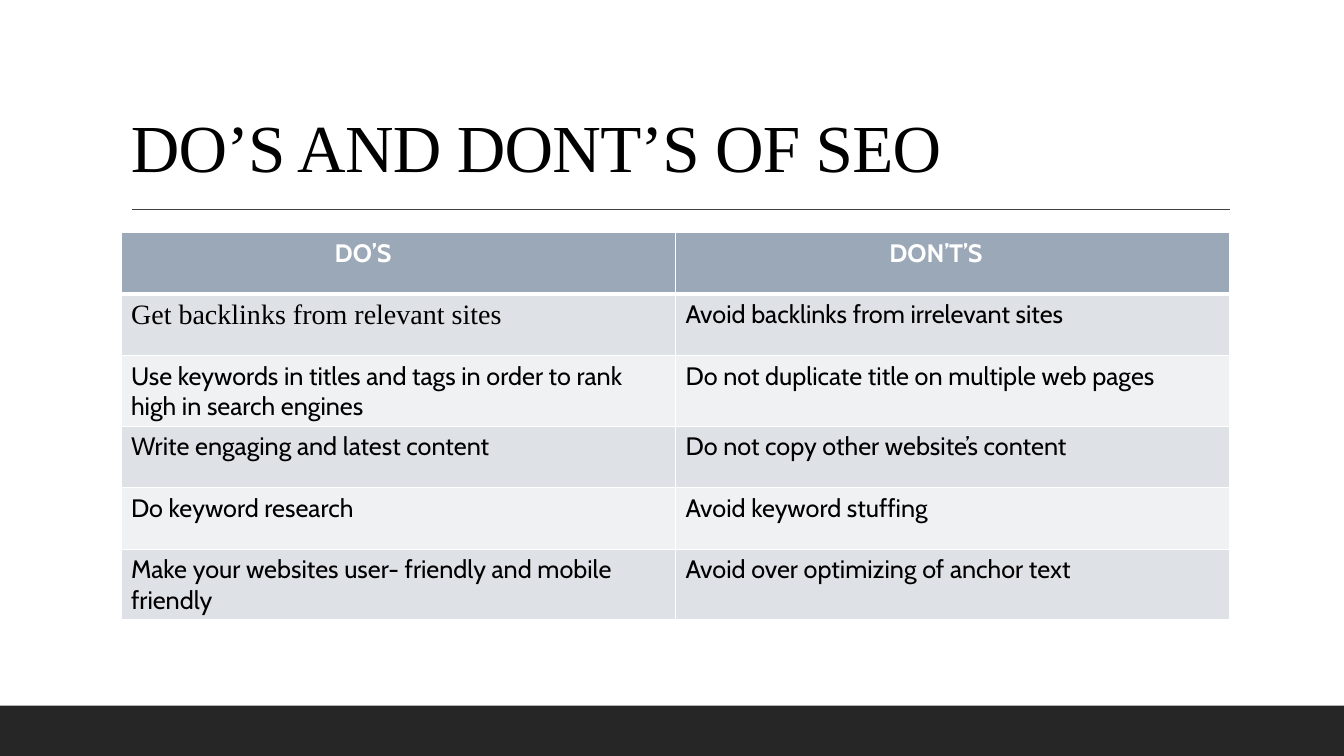
from lxml.etree import SubElement
from pptx import Presentation
from pptx.dml.color import RGBColor
from pptx.enum.shapes import MSO_CONNECTOR as Connector, MSO_SHAPE as Shape
from pptx.enum.text import MSO_ANCHOR as Anchor
from pptx.oxml.ns import qn
from pptx.util import Inches, Pt

WIDTH, HEIGHT = Inches(13.33), Inches(7.5)
SANS, SERIF = "Cabin", "Times New Roman"
HEADER_FILL, BAND_FILLS = "9BA8B7", ("DEE1E6", "EFF1F3")
ROWS = [
    ("DO’S", "DON’T’S"),
    ("Get backlinks from relevant sites", "Avoid backlinks from irrelevant sites"),
    ("Use keywords in titles and tags in order to rank high in search engines",
     "Do not duplicate title on multiple web pages"),
    ("Write engaging and latest content", "Do not copy other website’s content"),
    ("Do keyword research", "Avoid keyword stuffing"),
    ("Make your websites user- friendly and mobile friendly",
     "Avoid over optimizing of anchor text"),
]


def color(value):
    """Turn a hex string into a colour."""
    return RGBColor.from_string(value)


def style_text(para, font_name, size, ink, bold=False):
    """Format every run of a paragraph."""
    for span in para.runs:
        span.font.name = font_name
        span.font.size = Pt(size)
        span.font.bold = bold
        span.font.color.rgb = color(ink)


def add_footer_band(page, left, top, width, height):
    """Place the dark band along the foot of the page."""
    band = page.shapes.add_shape(Shape.RECTANGLE, left, top, width, height)
    band.shadow.inherit = False
    band.fill.solid()
    band.fill.fore_color.rgb = color("262626")
    band.line.fill.background()


def add_title(page, left, top, width, height):
    """Place the title at the bottom of its box, with a rule below it."""
    box = page.shapes.add_textbox(left, top, width, height)
    frame = box.text_frame
    frame.word_wrap = True
    frame.vertical_anchor = Anchor.BOTTOM
    frame.text = "DO’S AND DONT’S OF SEO"
    para = frame.paragraphs[0]
    para.line_spacing = 0.9
    style_text(para, SERIF, 48, "000000")
    for span in para.runs:
        span._r.get_or_add_rPr().set("spc", "-50")

    rule_left, rule_top = left + Inches(0.11), top + height + Inches(0.18)
    rule = page.shapes.add_connector(
        Connector.STRAIGHT, rule_left, rule_top, left + width, rule_top)
    rule.line.color.rgb = color("404040")
    rule.line.width = Pt(1)
    SubElement(rule._element.spPr, qn("a:effectLst"))


def add_borders(cell, top, bottom):
    """Draw white cell borders, with the top and bottom widths in points."""
    props = cell._tc.get_or_add_tcPr()
    for side, weight in (("L", 1), ("R", 1), ("T", top), ("B", bottom)):
        border = SubElement(props, qn(f"a:ln{side}"), w=str(Pt(weight)))
        fill = SubElement(border, qn("a:solidFill"))
        SubElement(fill, qn("a:srgbClr"), val="FFFFFF")


def add_advice_table(page, left, top, width, row_height):
    """Place the table of advice with a header row and banded rows."""
    table = page.shapes.add_table(
        len(ROWS), len(ROWS[0]), left, top, width, row_height * len(ROWS)).table
    for row, texts in enumerate(ROWS):
        header = row == 0
        for column, text in enumerate(texts):
            cell = table.cell(row, column)
            add_borders(cell, 3 if row == 1 else 1, 3 if header else 1)
            cell.fill.solid()
            cell.fill.fore_color.rgb = color(
                HEADER_FILL if header else BAND_FILLS[(row - 1) % 2])
            cell.text_frame.text = text
            para = cell.text_frame.paragraphs[0]
            if header:
                cell.margin_left = Inches(2.12)
                style_text(para, SANS, 18, "FFFFFF", True)
            elif (row, column) == (1, 0):
                style_text(para, SERIF, 20, "000000")
            else:
                style_text(para, SANS, 18, "000000")


def main():
    """Build and save the slide."""
    deck = Presentation()
    deck.slide_width, deck.slide_height = WIDTH, HEIGHT
    page = deck.slides.add_slide(deck.slide_layouts[6])
    left, width = Inches(1.2), Inches(11)
    add_footer_band(page, 0, Inches(7), WIDTH, HEIGHT - Inches(7))
    add_title(page, left, Inches(0.31), width, Inches(1.59))
    add_advice_table(page, left, Inches(2.31), width, Inches(0.61))
    deck.save("out.pptx")


if __name__ == "__main__":
    main()
